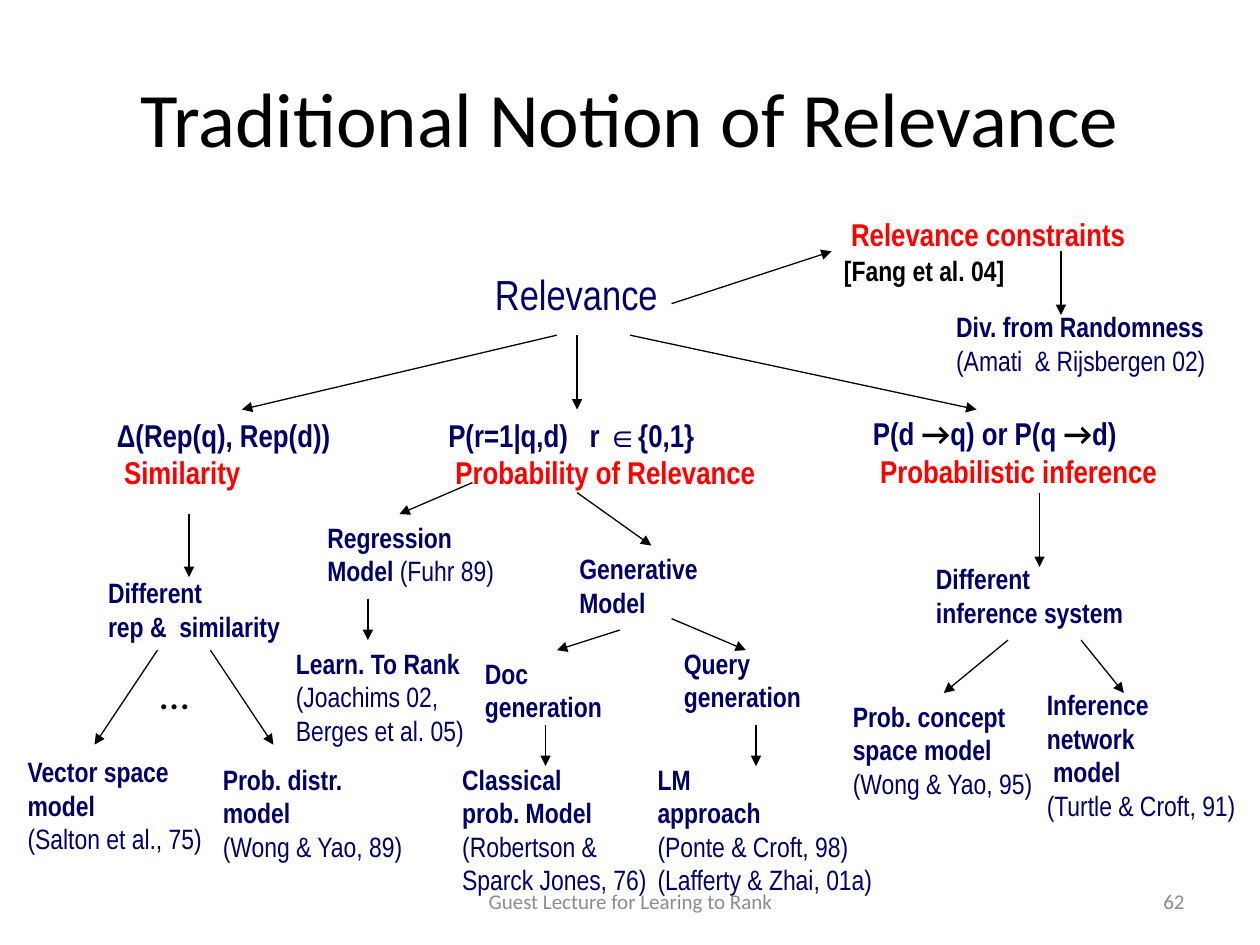
import pptx
import pptx.util
import pptx.dml.color
import pptx.enum.shapes
import pptx.enum.text
import pptx.oxml
import pptx.oxml.ns

PX = 9144  # EMU per px, 100 px to the inch
NAVY = pptx.dml.color.RGBColor(0x00, 0x00, 0x66)
RED = pptx.dml.color.RGBColor(0xFF, 0x00, 0x00)
BLACK = pptx.dml.color.RGBColor(0x00, 0x00, 0x00)
GREY = pptx.dml.color.RGBColor(0x8C, 0x8C, 0x8C)
ALIGN = pptx.enum.text.PP_ALIGN
ANCHOR = pptx.enum.text.MSO_ANCHOR
AUTO_SIZE = pptx.enum.text.MSO_AUTO_SIZE

FORMATS = {
    name: {"size": pptx.util.Pt(size), "name": font, "bold": bold, "color": color}
    for name, size, font, bold, color in [
        ("title", 44, "Calibri", False, BLACK),
        ("root", 24, "Arial Narrow", False, NAVY),
        ("formula", 18, "Arial Narrow", True, NAVY),
        ("notion", 18, "Arial Narrow", True, RED),
        ("arrow", 18, "Calibri", True, BLACK),
        ("model", 16, "Arial Narrow", True, NAVY),
        ("cite", 16, "Arial Narrow", False, NAVY),
        ("black cite", 16, "Arial Narrow", True, BLACK),
        ("dots", 24, "Calibri", False, BLACK),
        ("footer", 12, "Calibri", False, GREY),
    ]
}


def write(frame, paragraphs, align=ALIGN.LEFT):
    """Fill a frame; each paragraph is a list of (format name, text) spans."""
    for index, spans in enumerate(paragraphs):
        para = frame.add_paragraph() if index else frame.paragraphs[0]
        para.alignment = align
        for style, text in spans:
            span = para.add_run()
            span.text = text
            for key, value in FORMATS[style].items():
                if key == "color":
                    span.font.color.rgb = value
                else:
                    setattr(span.font, key, value)


def add_box(left, top, width, height):
    return page.shapes.add_textbox(left * PX, top * PX, width * PX, height * PX)


deck = pptx.Presentation()
deck.slide_width, deck.slide_height = 1000 * PX, 750 * PX
page = deck.slides.add_slide(deck.slide_layouts[5])

title = page.shapes.title
title.left, title.top, title.width, title.height = 50 * PX, 30 * PX, 900 * PX, 125 * PX
title.text_frame.vertical_anchor = ANCHOR.MIDDLE
write(title.text_frame, [[("title", "Traditional Notion of Relevance")]], ALIGN.CENTER)

# Labels with mixed formats: place, paragraphs
labels = [
    ((383, 208, 150, 50), [[("root", "Relevance")]]),
    ((83, 325, 213, 70), [[("formula", "Δ(Rep(q), Rep(d))")], [("notion", " Similarity")]]),
    ((346, 325, 264, 70), [[("formula", "P(r=1|q,d)   r ∈{0,1}")],
                           [("notion", " Probability of Relevance")]]),
    ((683, 324, 246, 70), [[("formula", "P(d "), ("arrow", "→"), ("formula", "q) or P(q "),
                            ("arrow", "→"), ("formula", "d)")],
                           [("notion", " Probabilistic inference")]]),
    ((660, 166, 246, 67), [[("notion", " Relevance constraints")],
                           [("black cite", "[Fang et al. 04]")]]),
    ((117, 525, 53, 50), [[("dots", "…")]]),
    ((250, 408, 154, 64), [[("model", "Regression")], [("model", "Model "), ("cite", "(Fuhr 89)")]]),
]

# Models: place, bold lines, cited lines
models = [
    ((76, 452, 160, 64), ["Different", "rep &  similarity"], []),
    ((12, 594, 162, 90), ["Vector space", "model"], ["(Salton et al., 75)"]),
    ((167, 600, 164, 90), ["Prob. distr.", "model"], ["(Wong & Yao, 89)"]),
    ((450, 433, 114, 64), ["Generative", "Model"], []),
    ((357, 600, 167, 117), ["Classical", "prob. Model"], ["(Robertson &", "Sparck Jones, 76)"]),
    ((375, 516, 113, 64), ["Doc", "generation"], []),
    ((533, 508, 113, 64), ["Query", "generation"], []),
    ((512, 600, 191, 117), ["LM", "approach"], ["(Ponte & Croft, 98)", "(Lafferty & Zhai, 01a)"]),
    ((667, 550, 164, 90), ["Prob. concept", "space model"], ["(Wong & Yao, 95)"]),
    ((733, 441, 172, 64), ["Different", "inference system"], []),
    ((821, 541, 170, 117), ["Inference", "network", " model"], ["(Turtle & Croft, 91)"]),
    ((749, 241, 219, 64), ["Div. from Randomness"], ["(Amati  & Rijsbergen 02)"]),
    ((225, 508, 155, 91), ["Learn. To Rank"], ["(Joachims 02,", "Berges et al. 05)"]),
]
for place, names, citations in models:
    labels.append((place, [[("model", line)] for line in names]
                   + [[("cite", line)] for line in citations]))

boxes = {}
for place, paragraphs in labels:
    box = boxes[place[:2]] = add_box(*place)
    box.text_frame.word_wrap = False
    box.text_frame.auto_size = AUTO_SIZE.SHAPE_TO_FIT_TEXT
    write(box.text_frame, paragraphs)

# Arrows: start, end, and the box and side joined at the end, if any
constraints, concept_space = boxes[660, 166], boxes[667, 550]
arrows = [
    ((442, 266), (192, 325), None),
    ((458, 266), (458, 325), None),
    ((500, 266), (775, 325), None),
    ((533, 241), (660, 199), (constraints, 1)),
    ((842, 199), (842, 250), None),
    ((150, 408), (150, 458), None),
    ((125, 516), (75, 591), None),
    ((167, 516), (217, 591), None),
    ((375, 383), (317, 408), None),
    ((458, 391), (517, 433), None),
    ((292, 475), (292, 508), None),
    ((492, 500), (442, 516), None),
    ((533, 491), (592, 516), None),
    ((433, 575), (433, 608), None),
    ((600, 575), (600, 608), None),
    ((825, 391), (825, 450), None),
    ((800, 508), (750, 550), (concept_space, 0)),
    ((858, 508), (892, 550), None),
]
namespace = pptx.oxml.ns.nsdecls("a")
for start, end, joint in arrows:
    arrow = page.shapes.add_connector(pptx.enum.shapes.MSO_CONNECTOR.STRAIGHT,
                                      *(length * PX for length in start + end))
    if joint:
        arrow.end_connect(*joint)
    arrow.line.color.rgb = BLACK
    arrow.line.width = pptx.util.Pt(0.75)
    properties = arrow.element.spPr
    properties.find(pptx.oxml.ns.qn("a:ln")).append(
        pptx.oxml.parse_xml(f'<a:tailEnd {namespace} type="triangle"/>'))
    properties.append(pptx.oxml.parse_xml(f"<a:effectLst {namespace}/>"))

for place, text, align in [
    ((342, 695, 317, 40), "Guest Lecture for Learing to Rank", ALIGN.CENTER),
    ((717, 695, 233, 40), "62", ALIGN.RIGHT),
]:
    box = add_box(*place)
    box.text_frame.word_wrap = True
    box.text_frame.vertical_anchor = ANCHOR.MIDDLE
    write(box.text_frame, [[("footer", text)]], align)

deck.save("out.pptx")
